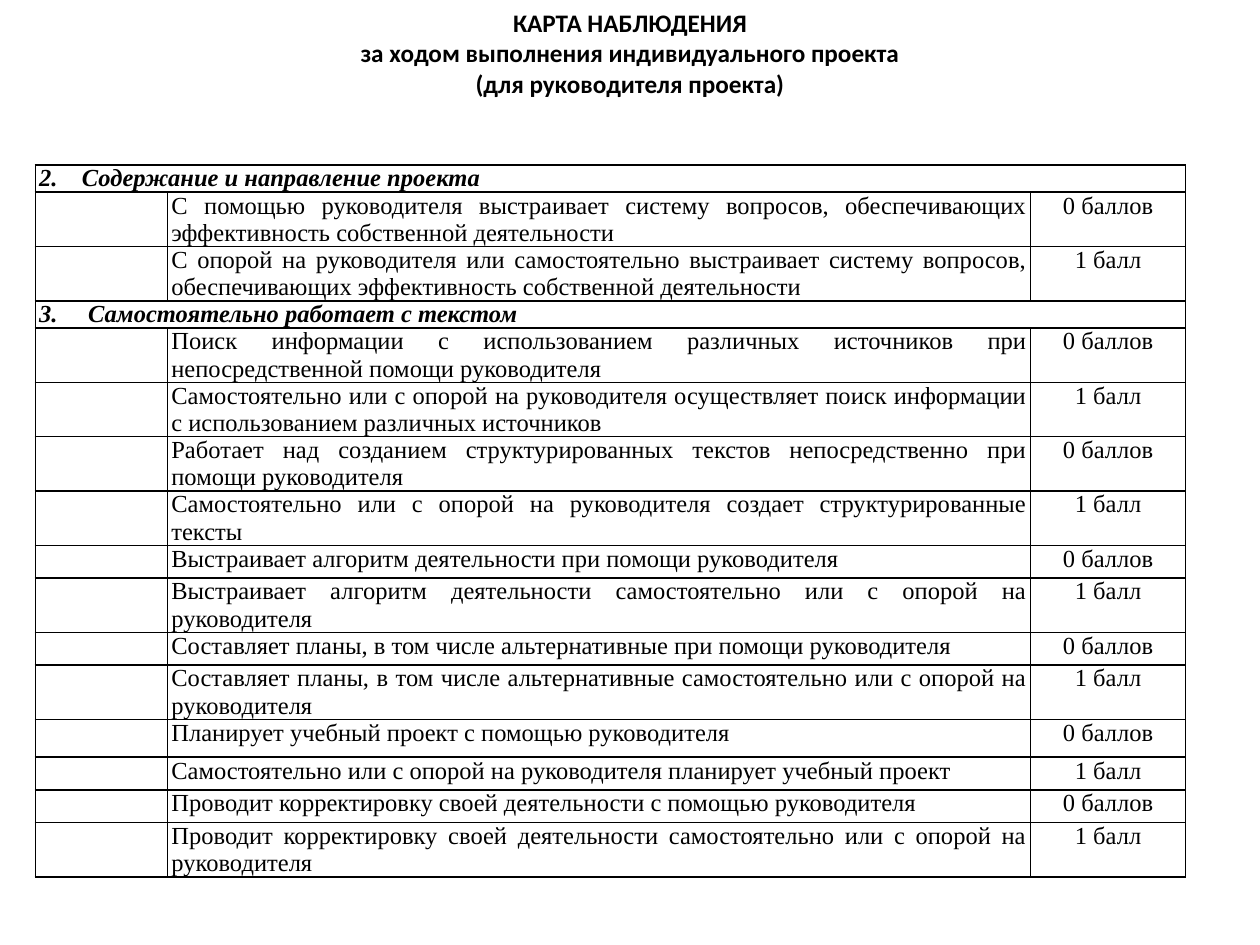
from dataclasses import dataclass

from lxml import etree
from pptx import Presentation
from pptx import util as u
from pptx.dml.color import RGBColor
from pptx.enum import text
from pptx.oxml import ns


@dataclass(frozen=True)
class Theme:
    ink: str = "000000"
    title_font: str = "Calibri"
    table_font: str = "Times New Roman"
    title_size: float = 14.4
    table_size: float = 14
    table_leading: float = 15.5
    border: float = 1


THEME = Theme()
COLUMNS = (1.05, 6.85, 1.23)
HEADING, SINGLE, LOOSE, DOUBLE = 0.21, 0.26, 0.3, 0.43
SCORES = ("0 баллов", "1 балл")
TITLE = (
    "КАРТА НАБЛЮДЕНИЯ\v"
    "за ходом выполнения индивидуального проекта\v"
    "(для руководителя проекта)"
)
SECTIONS = (
    ("2.\tСодержание и направление проекта", 0.34, (
        (DOUBLE, "С помощью руководителя выстраивает систему вопросов, обеспечивающих эффективность собственной деятельности"),
        (DOUBLE, "С опорой на руководителя или самостоятельно выстраивает систему вопросов, обеспечивающих эффективность собственной деятельности"),
    )),
    ("3.\tСамостоятельно работает с текстом", 0.39, (
        (DOUBLE, "Поиск информации с использованием различных источников при непосредственной помощи руководителя"),
        (DOUBLE, "Самостоятельно или с опорой на руководителя осуществляет поиск информации с использованием различных источников"),
        (DOUBLE, "Работает над созданием структурированных текстов непосредственно при помощи руководителя"),
        (DOUBLE, "Самостоятельно или с опорой на руководителя создает структурированные тексты"),
        (SINGLE, "Выстраивает алгоритм деятельности при помощи руководителя"),
        (DOUBLE, "Выстраивает алгоритм деятельности самостоятельно или с опорой на руководителя"),
        (SINGLE, "Составляет планы, в том числе альтернативные при помощи руководителя"),
        (DOUBLE, "Составляет планы, в том числе альтернативные самостоятельно или с опорой на руководителя"),
        (LOOSE, "Планирует учебный проект с помощью руководителя"),
        (SINGLE, "Самостоятельно или с опорой на руководителя планирует учебный проект"),
        (SINGLE, "Проводит корректировку своей деятельности с помощью руководителя"),
        (DOUBLE, "Проводит корректировку своей деятельности самостоятельно или с опорой на руководителя"),
    )),
)


def style_runs(para, font, size, bold=False, italic=False):
    for span in para.runs:
        span.font.name = font
        span.font.size = u.Pt(size)
        span.font.bold = bold
        span.font.italic = italic
        span.font.color.rgb = RGBColor.from_string(THEME.ink)


def add_title(page):
    box = page.shapes.add_textbox(u.Inches(0.5), u.Inches(0.01), u.Inches(9), u.Inches(1.06))
    frame = box.text_frame
    frame.word_wrap = True
    frame.vertical_anchor = text.MSO_ANCHOR.TOP
    frame.text = TITLE
    para = frame.paragraphs[0]
    para.alignment = text.PP_ALIGN.CENTER
    style_runs(para, THEME.title_font, THEME.title_size, bold=True)


def frame_cell(cell):
    cell.margin_left = cell.margin_right = u.Inches(0.03)
    cell.margin_top = cell.margin_bottom = 0
    properties = cell._tc.get_or_add_tcPr()
    for side in ("lnL", "lnR", "lnT", "lnB"):
        line = etree.SubElement(properties, ns.qn(f"a:{side}"), w=str(u.Pt(THEME.border)))
        fill = etree.SubElement(line, ns.qn("a:solidFill"))
        etree.SubElement(fill, ns.qn("a:srgbClr"), val=THEME.ink)
    cell.fill.background()
    para = cell.text_frame.paragraphs[0]
    para.line_spacing = u.Pt(THEME.table_leading)
    end = etree.SubElement(para._p, ns.qn("a:endParaRPr"))
    end.set("sz", str(int(THEME.table_size * 100)))
    etree.SubElement(end, ns.qn("a:latin"), typeface=THEME.table_font)


def write_cell(cell, words, alignment, hanging=None):
    para = cell.text_frame.paragraphs[0]
    para.text = words
    para.alignment = alignment
    heading = hanging is not None
    if heading:
        indent = u.Inches(hanging)
        properties = para._p.get_or_add_pPr()
        properties.set("marL", str(indent))
        properties.set("indent", str(-indent))
    style_runs(para, THEME.table_font, THEME.table_size, heading, heading)


def add_score_table(page):
    rows = []
    for heading, hanging, criteria in SECTIONS:
        rows.append((HEADING, heading, None, hanging))
        for number, (height, words) in enumerate(criteria):
            rows.append((height, words, SCORES[number % 2], None))

    frame = page.shapes.add_table(
        len(rows), len(COLUMNS), u.Inches(0.28), u.Inches(1.31),
        u.Inches(sum(COLUMNS)), u.Inches(sum(row[0] for row in rows)),
    )
    table = frame.table
    table.first_row = table.horz_banding = False
    for column, width in zip(table.columns, COLUMNS):
        column.width = u.Inches(width)
    for cell in table.iter_cells():
        frame_cell(cell)
    for index, (height, words, score, hanging) in enumerate(rows):
        table.rows[index].height = u.Inches(height)
        if score is None:
            table.cell(index, 0).merge(table.cell(index, 2))
            write_cell(table.cell(index, 0), words, text.PP_ALIGN.JUSTIFY, hanging)
        else:
            write_cell(table.cell(index, 1), words, text.PP_ALIGN.JUSTIFY)
            write_cell(table.cell(index, 2), score, text.PP_ALIGN.CENTER)


def main():
    deck = Presentation()
    deck.slide_width, deck.slide_height = u.Inches(10), u.Inches(7.5)
    page = deck.slides.add_slide(deck.slide_layouts[6])
    add_title(page)
    add_score_table(page)
    deck.save("out.pptx")


if __name__ == "__main__":
    main()
